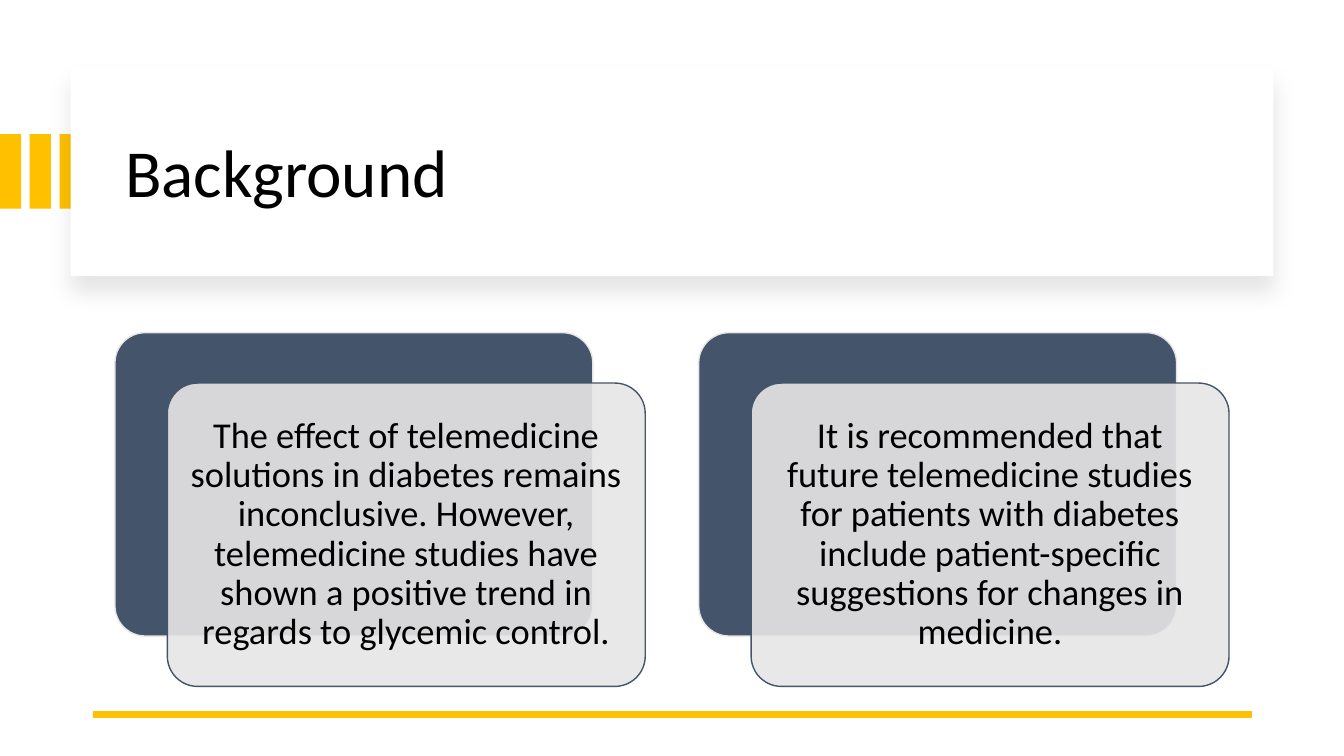
from dataclasses import dataclass

from lxml import etree
from pptx import Presentation
from pptx import util as u
from pptx.dml.color import RGBColor
from pptx.enum import shapes, text
from pptx.oxml.ns import qn


@dataclass(frozen=True)
class Theme:
    font: str = "Calibri"
    title_size: float = 48
    body_size: float = 26
    ink: str = "000000"
    paper: str = "FFFFFF"
    accent: str = "FFC000"
    navy: str = "44546A"
    mist: str = "E7E6E6"


THEME = Theme()
WIDTH, HEIGHT = 13.33, 7.5

STATEMENTS = [
    "The effect of telemedicine solutions in diabetes remains inconclusive. "
    "However, telemedicine studies have shown a positive trend in regards to "
    "glycemic control.",
    "It is recommended that future telemedicine studies for patients with "
    "diabetes include patient-specific suggestions for changes in medicine.",
]


def colour(value):
    return RGBColor.from_string(value)


def add_block(page, kind, box, fill, line=None):
    block = page.shapes.add_shape(kind, *(u.Inches(n) for n in box))
    block.shadow.inherit = False
    block.fill.solid()
    block.fill.fore_color.rgb = colour(fill)
    if line:
        block.line.color.rgb = colour(line)
        block.line.width = u.Pt(1)
    else:
        block.line.fill.background()
    return block


def write(frame, wording, size, align, inset):
    frame.word_wrap = True
    frame.auto_size = text.MSO_AUTO_SIZE.NONE
    frame.vertical_anchor = text.MSO_ANCHOR.MIDDLE
    frame.margin_left = frame.margin_right = u.Inches(inset[0])
    frame.margin_top = frame.margin_bottom = u.Inches(inset[1])
    para = frame.paragraphs[0]
    para.alignment = align
    para.line_spacing = 0.9
    span = para.add_run()
    span.text = wording
    span.font.name = THEME.font
    span.font.size = u.Pt(size)
    span.font.color.rgb = colour(THEME.ink)


def add_alpha(parent, percent):
    etree.SubElement(parent, qn("a:alpha"), val=str(percent * 1000))


def soften(panel):
    """Give the panel a faint shadow falling straight down."""
    effects = panel._element.spPr.find(qn("a:effectLst"))
    shadow = etree.SubElement(
        effects, qn("a:outerShdw"), blurRad=str(u.Pt(15)), dist=str(u.Pt(11)),
        dir=str(90 * 60000), algn="t", rotWithShape="0")
    add_alpha(etree.SubElement(shadow, qn("a:srgbClr"), val=THEME.ink), 10)


def add_header(page, box, wording):
    left, top, width, height = box
    # Accent bars running in from the slide's left edge
    bar_width, bar_height, pitch = 0.21, 0.74, 0.295
    for index in range(3):
        add_block(page, shapes.MSO_SHAPE.RECTANGLE,
                  (index * pitch, top + 0.66, bar_width, bar_height), THEME.accent)
    # Raised panel
    soften(add_block(page, shapes.MSO_SHAPE.RECTANGLE, box, THEME.paper))
    # Title, brought in front of the panel
    title = page.shapes.title
    title.left, title.top = u.Inches(left + 0.44), u.Inches(top + 0.22)
    title.width, title.height = u.Inches(width - 0.8), u.Inches(height - 0.37)
    write(title.text_frame, wording, THEME.title_size,
          text.PP_ALIGN.LEFT, (0.1, 0.05))
    title._element.getparent().append(title._element)


def add_card(page, box, wording):
    left, top, width, height = box
    shift_x, shift_y = 0.52, 0.5
    size = (width - shift_x, height - shift_y)
    kind = shapes.MSO_SHAPE.ROUNDED_RECTANGLE
    back = add_block(page, kind, (left, top, *size), THEME.navy, THEME.mist)
    front = add_block(page, kind, (left + shift_x, top + shift_y, *size),
                      THEME.mist, THEME.navy)
    for plate in (back, front):
        plate.adjustments[0] = 0.1
    add_alpha(front._element.spPr.find(qn("a:solidFill"))[0], 90)
    write(front.text_frame, wording, THEME.body_size,
          text.PP_ALIGN.CENTER, (0.11, 0.11))


def add_cards(page, box, statements):
    left, top, width, height = box
    gap = 0.53
    card_width = (width - gap * (len(statements) - 1)) / len(statements)
    for index, wording in enumerate(statements):
        add_card(page, (left + index * (card_width + gap), top, card_width, height),
                 wording)


def add_footer_rule(page, left, right, level):
    rule = page.shapes.add_connector(
        shapes.MSO_CONNECTOR.STRAIGHT,
        *(u.Inches(n) for n in (right, level, left, level)))
    rule.line.color.rgb = colour(THEME.accent)
    rule.line.width = u.Pt(4.5)
    etree.SubElement(rule._element.spPr, qn("a:effectLst"))


def main():
    deck = Presentation()
    deck.slide_width, deck.slide_height = u.Inches(WIDTH), u.Inches(HEIGHT)
    page = deck.slides.add_slide(deck.slide_layouts[5])
    page.background.fill.solid()
    page.background.fill.fore_color.rgb = colour(THEME.paper)
    add_header(page, (0.7, 0.67, WIDTH - 1.4, 2.07), "Background")
    add_footer_rule(page, 0.92, 12.42, 7.09)
    add_cards(page, (1.14, 3.3, 11.05, 3.51), STATEMENTS)
    deck.save("out.pptx")


if __name__ == "__main__":
    main()
